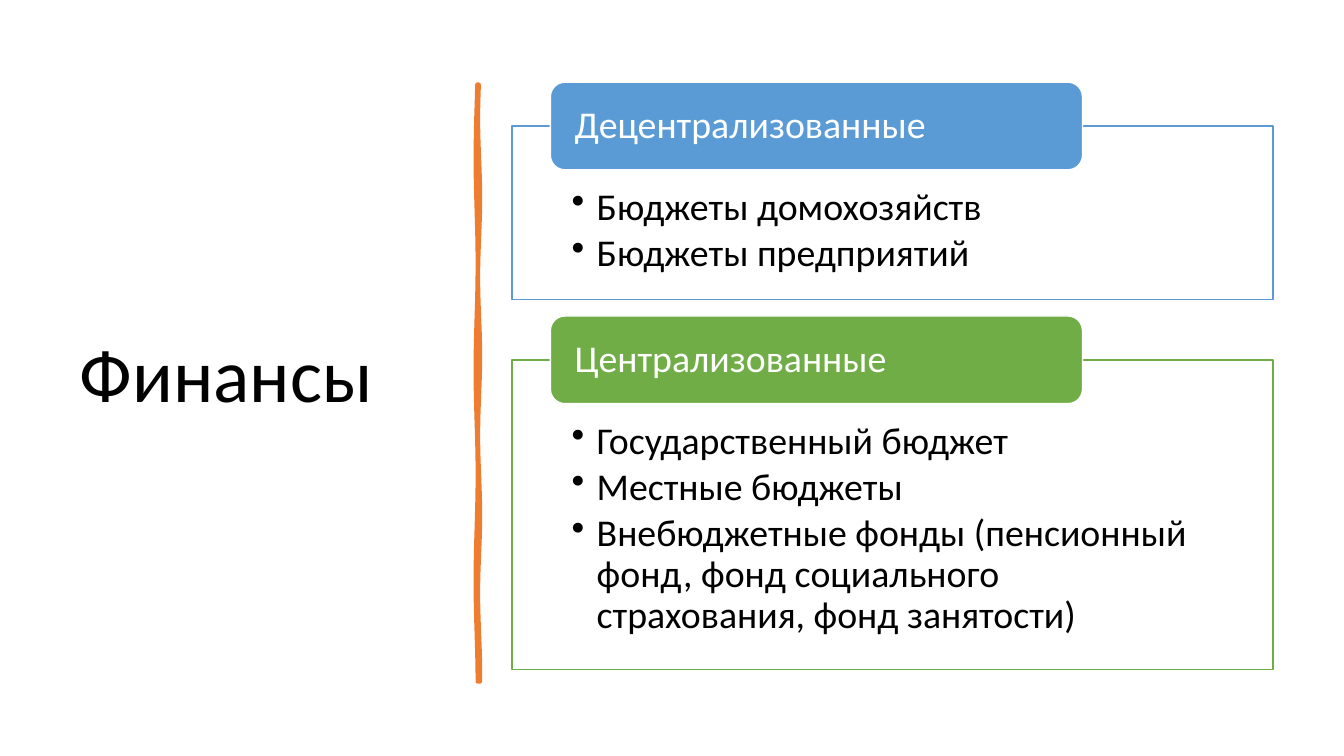
from math import sin

from lxml import etree
from pptx import Presentation
from pptx import util as u
from pptx.dml.color import RGBColor
from pptx.enum import shapes, text
from pptx.oxml import ns

WIDTH, HEIGHT = u.Inches(13.33), u.Inches(7.5)
FONT = "Calibri"
BLACK = RGBColor(0x00, 0x00, 0x00)
WHITE = RGBColor(0xFF, 0xFF, 0xFF)
ORANGE = RGBColor(0xED, 0x7D, 0x31)
BLUE = RGBColor(0x5B, 0x9B, 0xD5)
GREEN = RGBColor(0x70, 0xAD, 0x47)

CARD_LEFT, CARD_WIDTH = 38.1, 56.63
HEADER_LEFT, HEADER_WIDTH, HEADER_HEIGHT = 40.95, 39.6, 11.6
FIRST_TOP, GAP = 10.87, 2.2

BUDGETS = [
    ("Децентрализованные", BLUE, 22.93,
     ["Бюджеты домохозяйств", "Бюджеты предприятий"]),
    ("Централизованные", GREEN, 40.93,
     ["Государственный бюджет", "Местные бюджеты",
      "Внебюджетные фонды (пенсионный фонд, фонд социального "
      "страхования, фонд занятости)"]),
]


def across(percent):
    """Turn a percentage of the slide width into a length."""
    return u.Emu(round(WIDTH * percent / 100))


def down(percent):
    """Turn a percentage of the slide height into a length."""
    return u.Emu(round(HEIGHT * percent / 100))


def write(frame, lines, size, color, anchor, insets, after=0):
    """Fill a text frame with left-aligned paragraphs of one style."""
    frame.text = "\n".join(lines)
    frame.word_wrap = True
    frame.auto_size = text.MSO_AUTO_SIZE.NONE
    frame.vertical_anchor = anchor
    (frame.margin_left, frame.margin_top,
     frame.margin_right, frame.margin_bottom) = map(u.Inches, insets)
    for paragraph in frame.paragraphs:
        paragraph.alignment = text.PP_ALIGN.LEFT
        paragraph.line_spacing = 0.9
        paragraph.space_after = u.Pt(after)
        for run in paragraph.runs:
            run.font.name, run.font.size = FONT, u.Pt(size)
            run.font.color.rgb = color


def add_bullets(frame):
    """Give every paragraph a round bullet and a hanging indent."""
    for paragraph in frame.paragraphs:
        properties = paragraph._p.get_or_add_pPr()
        properties.set("marL", str(u.Inches(0.25)))
        properties.set("indent", str(-u.Inches(0.25)))
        etree.SubElement(properties, ns.qn("a:buChar")).set("char", "•")


def paint(shape, fill, line, width):
    """Set a flat fill and outline without a shadow."""
    shape.shadow.inherit = False
    shape.fill.solid()
    shape.fill.fore_color.rgb = fill
    shape.line.color.rgb = line
    shape.line.width = u.Pt(width)


def add_panel(slide, kind, left, top, width, height, fill, line):
    """Add a painted panel placed by percentages of the slide."""
    panel = slide.shapes.add_shape(
        kind, across(left), down(top), across(width), down(height))
    paint(panel, fill, line, 1)
    return panel


def add_budget(slide, top, heading, color, height, items):
    """Add a bulleted card with its heading centred on the top edge."""
    card = add_panel(slide, shapes.MSO_SHAPE.RECTANGLE, CARD_LEFT,
                     top + HEADER_HEIGHT / 2, CARD_WIDTH, height, WHITE, color)
    write(card.text_frame, items, 27, BLACK, text.MSO_ANCHOR.TOP,
          (0.59, 0.61, 0.59, 0.21), after=4)
    add_bullets(card.text_frame)
    header = add_panel(slide, shapes.MSO_SHAPE.ROUNDED_RECTANGLE, HEADER_LEFT,
                       top, HEADER_WIDTH, HEADER_HEIGHT, color, WHITE)
    write(header.text_frame, [heading], 27, WHITE, text.MSO_ANCHOR.MIDDLE,
          (0.2, 0, 0.2, 0))


def add_brush_stroke(slide):
    """Draw the wavy vertical divider."""
    steps, top, length = 60, 0.84, 5.92
    heights = [top + length * step / steps for step in range(steps + 1)]
    right = [(4.75 + 0.01 * sin(4 * y), y) for y in heights]
    left = [(4.73 + 0.01 * sin(3 * y), y) for y in reversed(heights)]
    outline = [(u.Inches(x), u.Inches(y)) for x, y in right + left]
    builder = slide.shapes.build_freeform(*outline[0])
    builder.add_line_segments(outline[1:], close=True)
    paint(builder.convert_to_shape(), ORANGE, ORANGE, 3.25)


def add_title(slide, wording):
    """Place the title in the left column."""
    title = slide.shapes.title
    title.left, title.top = across(5.18), down(9.33)
    title.width, title.height = across(28.06), down(81.47)
    write(title.text_frame, [wording], 54, BLACK, text.MSO_ANCHOR.MIDDLE,
          (0.1, 0.05, 0.1, 0.05))


def main():
    """Build the slide and save it."""
    deck = Presentation()
    deck.slide_width, deck.slide_height = WIDTH, HEIGHT
    slide = deck.slides.add_slide(deck.slide_layouts[5])
    add_title(slide, "Финансы")
    add_brush_stroke(slide)
    top = FIRST_TOP
    for heading, color, height, items in BUDGETS:
        add_budget(slide, top, heading, color, height, items)
        top += HEADER_HEIGHT / 2 + height + GAP
    deck.save("out.pptx")


if __name__ == "__main__":
    main()
